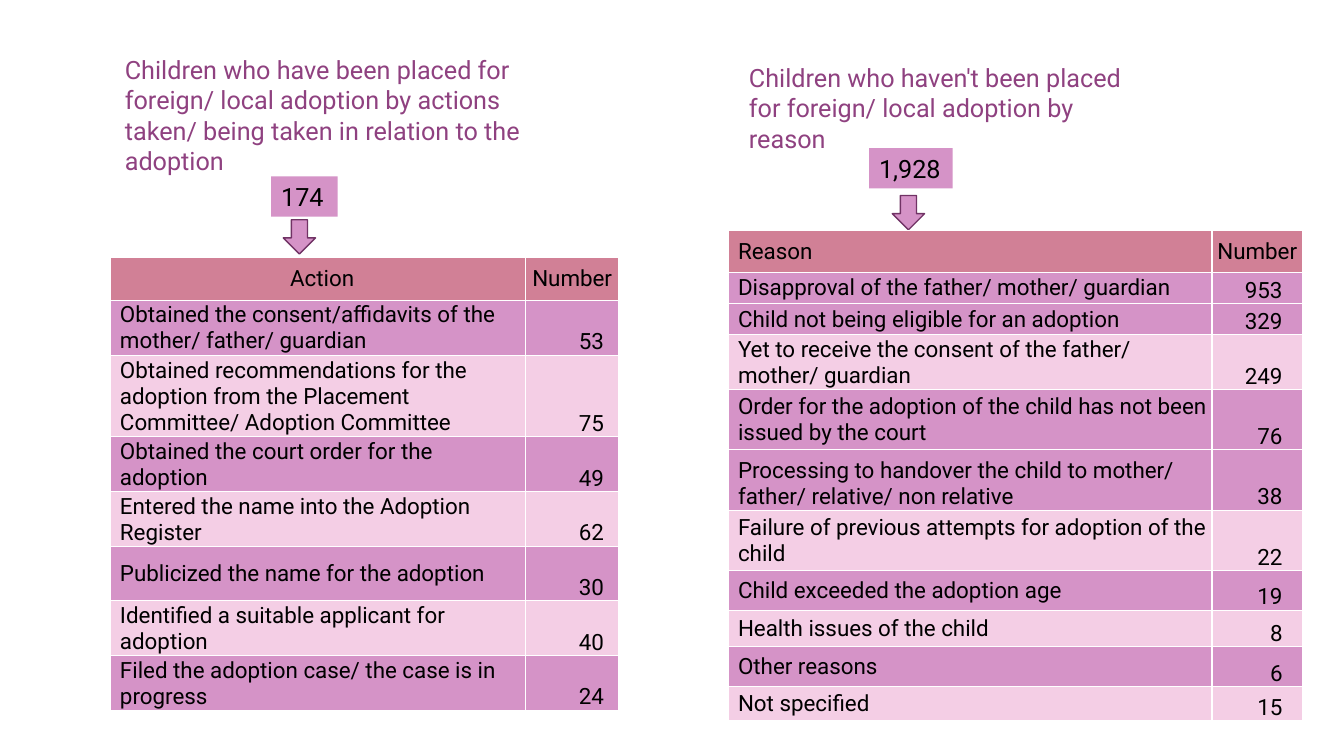
import pptx
import pptx.util
import pptx.dml.color
import pptx.enum.shapes
import pptx.enum.text
import pptx.oxml
from dataclasses import dataclass
from pptx.oxml import ns

Inches = pptx.util.Inches
Pt = pptx.util.Pt
RGB = pptx.dml.color.RGBColor.from_string
SHAPE = pptx.enum.shapes.MSO_SHAPE
ANCHOR = pptx.enum.text.MSO_ANCHOR
ALIGN = pptx.enum.text.PP_ALIGN


@dataclass(frozen=True)
class Theme:
    font: str = "Roboto"
    title_size: int = 18
    table_size: int = 16
    title: str = "8F4180"
    text: str = "000000"
    header: str = "D18096"
    dark: str = "D593C7"
    light: str = "F4CEE5"
    outline: str = "713365"
    border: str = "FFFFFF"


THEME = Theme()


@dataclass
class Panel:
    """Offsets are (x, y) from the panel's top left corner; rows hold text, number, height, fill."""
    title: str
    title_size: tuple
    title_dx: float
    total: str
    total_at: tuple
    total_width: float
    arrow_at: tuple
    table_top: float
    columns: tuple
    header: str
    header_height: float
    header_align: object
    number_margin: float
    rows: list
    bottom_rows: tuple = ()


PLACED = Panel(
    title="Children who have been placed for foreign/ local adoption by actions "
          "taken/ being taken in relation to the\nadoption",
    title_size=(4.67, 1.31), title_dx=0.05,
    total="174", total_at=(1.6, 1.26), total_width=0.66,
    arrow_at=(1.72, 1.69), table_top=2.06, columns=(4.12, 0.93),
    header="Action", header_height=0.43, header_align=ALIGN.CENTER, number_margin=0.15,
    rows=[
        ("Obtained the consent/affidavits of the mother/ father/ guardian", 53, 0.54, THEME.dark),
        ("Obtained recommendations for the adoption from the Placement "
         "Committee/ Adoption Committee", 75, 0.81, THEME.light),
        ("Obtained the court order for the adoption", 49, 0.54, THEME.dark),
        ("Entered the name into the Adoption Register", 62, 0.54, THEME.light),
        ("Publicized the name for the adoption", 30, 0.54, THEME.dark),
        ("Identified a suitable applicant for adoption", 40, 0.54, THEME.light),
        ("Filed the adoption case/ the case is in progress", 24, 0.54, THEME.dark),
    ])

NOT_PLACED = Panel(
    title="Children who haven't been placed for foreign/ local adoption by reason",
    title_size=(4.23, 1.01), title_dx=0.11,
    total="1,928", total_at=(1.4, 0.9), total_width=0.83,
    arrow_at=(1.63, 1.37), table_top=1.72, columns=(4.8, 0.9),
    header="Reason", header_height=0.41, header_align=ALIGN.LEFT, number_margin=0.2,
    rows=[
        ("Disapproval of the father/ mother/ guardian", 953, 0.31, THEME.dark),
        ("Child not being eligible for an adoption", 329, 0.31, THEME.dark),
        ("Yet to receive the consent of the father/ mother/ guardian", 249, 0.54, THEME.light),
        ("Order for the adoption of the child has not been issued by the court",
         76, 0.6, THEME.dark),
        ("Processing to handover the child to mother/ father/ relative/ non relative",
         38, 0.6, THEME.dark),
        ("Failure of previous attempts for adoption of the child", 22, 0.6, THEME.light),
        ("Child exceeded the adoption age", 19, 0.39, THEME.dark),
        ("Health issues of the child", 8, 0.36, THEME.light),
        ("Other reasons", 6, 0.4, THEME.dark),
        ("Not specified", 15, 0.34, THEME.light),
    ],
    bottom_rows=(5,))


def write(tf, text, size, color, align=ALIGN.LEFT):
    tf.word_wrap = True
    tf.text = text
    for p in tf.paragraphs:
        p.alignment = align
        for r in p.runs:
            r.font.name = THEME.font
            r.font.size = Pt(size)
            r.font.color.rgb = RGB(color)


def add_filled_shape(slide, kind, x, y, w, h):
    sp = slide.shapes.add_shape(kind, Inches(x), Inches(y), Inches(w), Inches(h))
    sp.shadow.inherit = False
    sp.fill.solid()
    sp.fill.fore_color.rgb = RGB(THEME.dark)
    sp.line.fill.background()
    return sp


def set_borders(cell):
    tc_pr = cell._tc.get_or_add_tcPr()
    for i, side in enumerate(("lnL", "lnR", "lnT", "lnB")):
        tc_pr.insert(i, pptx.oxml.parse_xml(
            f'<a:{side} {ns.nsdecls("a")} w="{Pt(1)}"><a:solidFill>'
            f'<a:srgbClr val="{THEME.border}"/></a:solidFill></a:{side}>'))


def fill_cell(cell, text, fill, align, anchor, left, right=0.01):
    cell.margin_left, cell.margin_right = Inches(left), Inches(right)
    cell.margin_top, cell.margin_bottom = Inches(0.01), 0
    cell.vertical_anchor = anchor
    cell.fill.solid()
    cell.fill.fore_color.rgb = RGB(fill)
    write(cell.text_frame, text, THEME.table_size, THEME.text, align)
    set_borders(cell)


def add_breakdown_table(slide, panel, x, y):
    heights = [panel.header_height] + [row[2] for row in panel.rows]
    table = slide.shapes.add_table(
        len(heights), 2, Inches(x), Inches(y),
        Inches(sum(panel.columns)), Inches(sum(heights))).table
    for column, width in zip(table.columns, panel.columns):
        column.width = Inches(width)
    for row, height in zip(table.rows, heights):
        row.height = Inches(height)
    fill_cell(table.cell(0, 0), panel.header, THEME.header,
              panel.header_align, ANCHOR.MIDDLE, 0.1)
    fill_cell(table.cell(0, 1), "Number", THEME.header, ALIGN.CENTER, ANCHOR.MIDDLE, 0.01)
    for i, (label, number, _, fill) in enumerate(panel.rows, 1):
        anchor = ANCHOR.BOTTOM if i in panel.bottom_rows else ANCHOR.MIDDLE
        fill_cell(table.cell(i, 0), label, fill, ALIGN.LEFT, anchor, 0.1)
        fill_cell(table.cell(i, 1), str(number), fill, ALIGN.RIGHT, ANCHOR.BOTTOM,
                  0.01, panel.number_margin)


def add_panel(slide, panel, x, y):
    """Title, total, arrow and breakdown table, placed from the corner (x, y)."""
    width, height = panel.title_size
    title = slide.shapes.add_textbox(
        Inches(x + panel.title_dx), Inches(y), Inches(width), Inches(height))
    write(title.text_frame, panel.title, THEME.title_size, THEME.title)

    dx, dy = panel.arrow_at
    arrow = add_filled_shape(slide, SHAPE.DOWN_ARROW, x + dx, y + dy, 0.32, 0.34)
    arrow.line.color.rgb = RGB(THEME.outline)
    arrow.line.width = Pt(1)

    add_breakdown_table(slide, panel, x, y + panel.table_top)

    dx, dy = panel.total_at
    total = add_filled_shape(slide, SHAPE.RECTANGLE, x + dx, y + dy, panel.total_width, 0.4)
    write(total.text_frame, panel.total, THEME.title_size, THEME.text)
    total.text_frame.word_wrap = False
    total.text_frame.vertical_anchor = ANCHOR.TOP


def main():
    prs = pptx.Presentation()
    prs.slide_width, prs.slide_height = Inches(13.33), Inches(7.5)
    slide = prs.slides.add_slide(prs.slide_layouts[6])
    add_panel(slide, PLACED, 1.09, 0.49)
    add_panel(slide, NOT_PLACED, 7.22, 0.57)
    prs.save("out.pptx")


if __name__ == "__main__":
    main()
